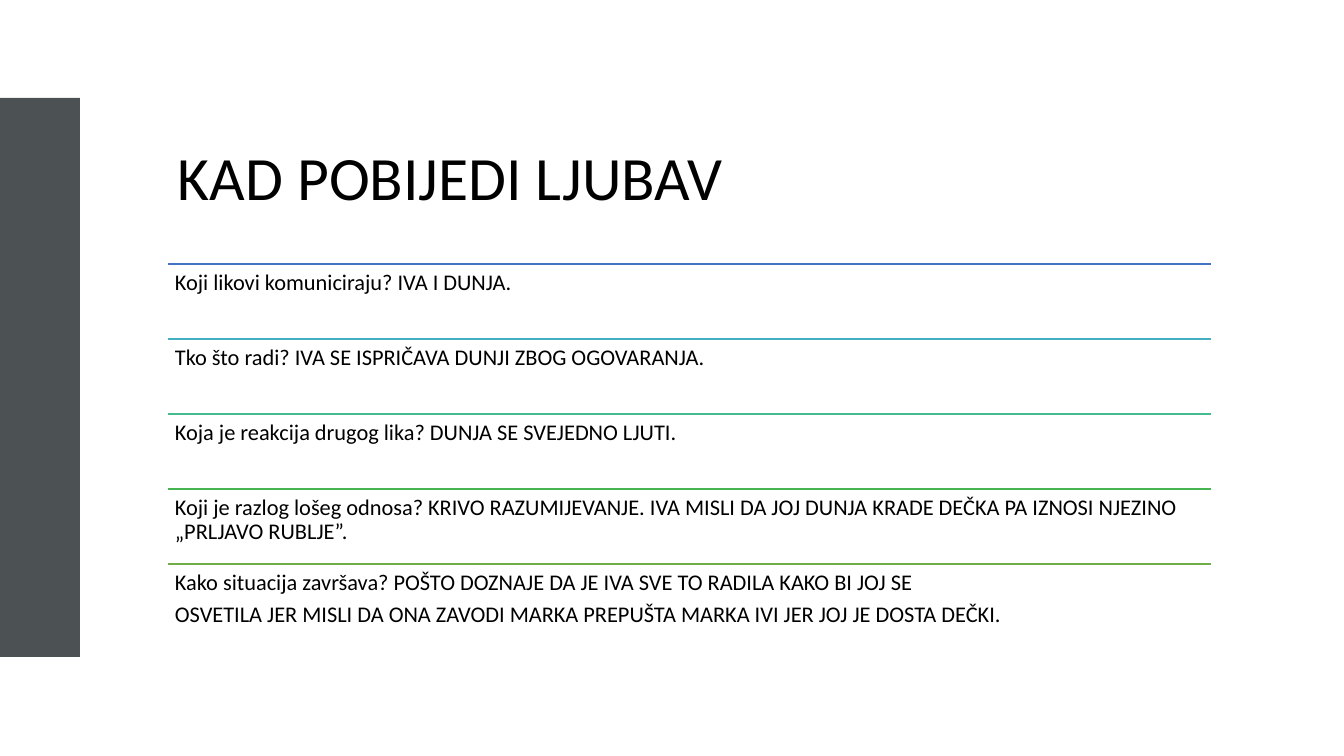
import dataclasses
import pptx
import pptx.util
import pptx.dml.color
import pptx.enum.shapes
import pptx.enum.text
import pptx.oxml.ns
import lxml.etree

Anchor = pptx.enum.text.MSO_ANCHOR
Pt = pptx.util.Pt


@dataclasses.dataclass(frozen=True)
class Theme:
    font: str = "Calibri"
    ink: str = "000000"
    paper: str = "FFFFFF"
    slate: str = "4C5254"
    rules: tuple = ("4472C4", "43AFC0", "43BB8D", "45B451", "70AD47")
    title: int = 44
    body: int = 16
    gap: float = 5.6
    lead: float = 0.9
    rule: int = 1


def color(code):
    return pptx.dml.color.RGBColor.from_string(code)


def px(size):
    return pptx.util.Emu(round(size * 914400 / 100.8))


def apply(item, values):
    for name, value in values.items():
        setattr(item, name, value)


def child(node, tag, **attrs):
    return lxml.etree.SubElement(node, pptx.oxml.ns.qn(tag), attrs)


class Deck:
    def __init__(self, theme):
        self.theme = theme
        self.show = pptx.Presentation()
        apply(self.show, {"slide_width": px(1344), "slide_height": px(756)})
        self.slide = self.show.slides.add_slide(self.show.slide_layouts[6])
        self.shapes = self.slide.shapes

    def panel(self, box, fill, alpha=100):
        kind = pptx.enum.shapes.MSO_SHAPE.RECTANGLE
        shape = self.shapes.add_shape(kind, *map(px, box))
        shape.shadow.inherit = False
        shape.fill.solid()
        shape.fill.fore_color.rgb = color(fill)
        shape.line.fill.background()
        if alpha < 100:
            tone = shape.fill._xPr.find(".//" + pptx.oxml.ns.qn("a:srgbClr"))
            child(tone, "a:alpha", val=str(alpha * 1000))

    def text(self, group, box, lines, size, inset, anchor, gap=0):
        frame = group.add_textbox(*map(px, box)).text_frame
        sides = ("left", "top", "right", "bottom")
        apply(frame, {f"margin_{side}": px(inset) for side in sides})
        apply(frame, {"word_wrap": True, "vertical_anchor": anchor,
                      "text": "\n".join(lines)})
        for para in frame.paragraphs:
            apply(para, {"line_spacing": self.theme.lead, "space_after": Pt(gap)})
            font = para.runs[0].font
            apply(font, {"name": self.theme.font, "size": Pt(size)})
            font.color.rgb = color(self.theme.ink)

    def rule(self, group, left, right, top, tone):
        kind = pptx.enum.shapes.MSO_CONNECTOR.STRAIGHT
        line = group.add_connector(kind, *map(px, (left, top, right, top)))
        line.line.color.rgb = color(tone)
        line.line.width = Pt(self.theme.rule)
        child(line._element.spPr, "a:effectLst")


def main():
    theme = Theme()
    deck = Deck(theme)
    left, width, top, step = 168, 1043, 264, 75
    deck.panel((0, 98, 80, 559), theme.slate)
    deck.panel((132, 98, 1212, 559), theme.paper, 80)
    deck.text(deck.shapes, (left, 116, width, 130), ["KAD POBIJEDI LJUBAV"],
              theme.title, 10, Anchor.MIDDLE)
    notes = (
        ["Koji likovi komuniciraju? IVA I DUNJA."],
        ["Tko što radi? IVA SE ISPRIČAVA DUNJI ZBOG OGOVARANJA."],
        ["Koja je reakcija drugog lika? DUNJA SE SVEJEDNO LJUTI."],
        ["Koji je razlog lošeg odnosa? KRIVO RAZUMIJEVANJE. IVA MISLI DA JOJ "
         "DUNJA KRADE DEČKA PA IZNOSI NJEZINO „PRLJAVO RUBLJE”."],
        ["Kako situacija završava? POŠTO DOZNAJE DA JE IVA SVE TO RADILA KAKO BI JOJ SE",
         "OSVETILA JER MISLI DA ONA ZAVODI MARKA PREPUŠTA MARKA IVI JER JOJ JE "
         "DOSTA DEČKI."],
    )
    group = deck.shapes.add_group_shape().shapes
    for row, (lines, tone) in enumerate(zip(notes, theme.rules)):
        y = top + row * step
        deck.rule(group, left, left + width, y, tone)
        deck.text(group, (left, y, width, step), lines, theme.body, 7,
                  Anchor.TOP, theme.gap)
    deck.show.save("out.pptx")


if __name__ == "__main__":
    main()
